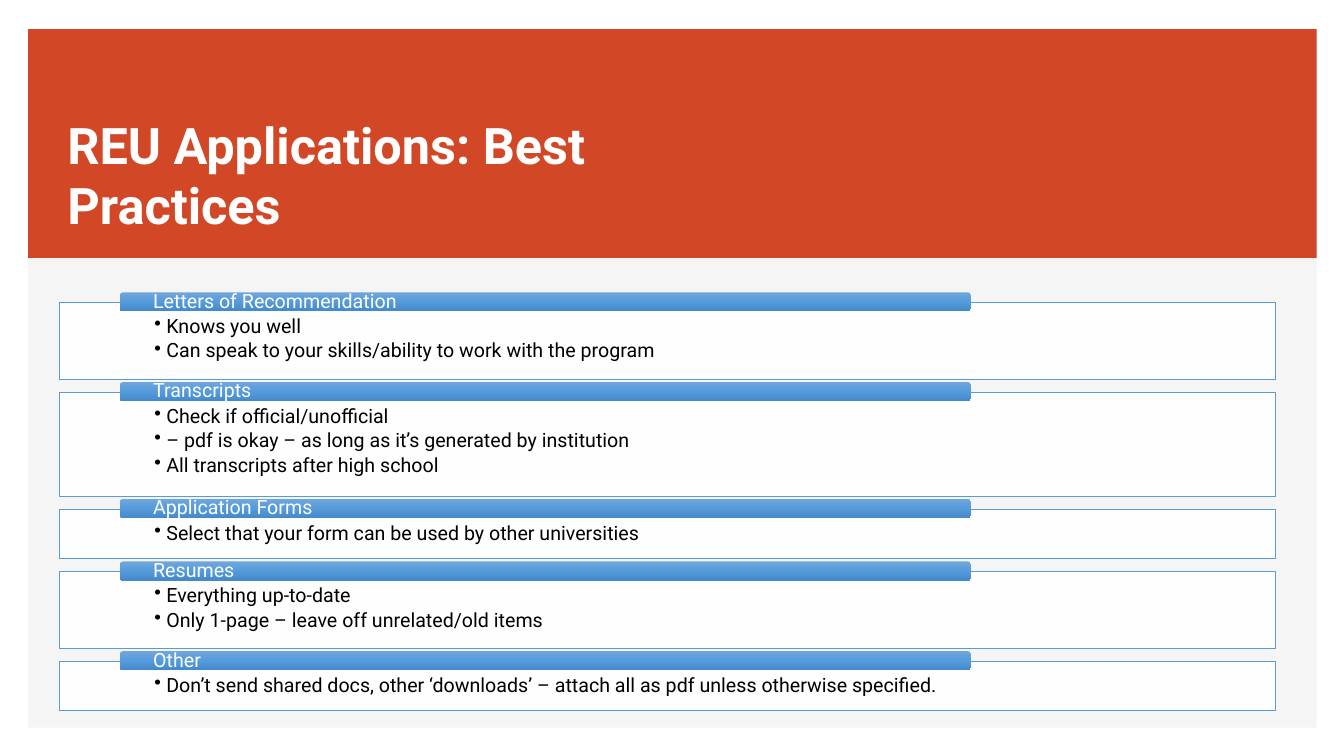
from copy import deepcopy

from pptx import Presentation
from pptx.dml.color import RGBColor
from pptx.enum import shapes, text
from pptx.oxml import ns
from pptx.util import Inches, Pt
from lxml import etree

WHITE = RGBColor(0xFF, 0xFF, 0xFF)
BLACK = RGBColor(0x00, 0x00, 0x00)
GREY = RGBColor(0xF5, 0xF5, 0xF5)
ORANGE = RGBColor(0xD2, 0x47, 0x26)
BLUE = RGBColor(0x5B, 0x9B, 0xD5)
BAR_GRADIENT = [
    RGBColor(0x71, 0xA6, 0xDB),
    RGBColor(0x55, 0x9B, 0xDB),
    RGBColor(0x44, 0x8A, 0xCA),
]
FONT = "Roboto"

SECTIONS = [
    ("Letters of Recommendation", [
        "Knows you well",
        "Can speak to your skills/ability to work with the program",
    ]),
    ("Transcripts", [
        "Check if official/unofficial",
        "– pdf is okay – as long as it’s generated by institution",
        "All transcripts after high school",
    ]),
    ("Application Forms", [
        "Select that your form can be used by other universities",
    ]),
    ("Resumes", [
        "Everything up-to-date",
        "Only 1-page – leave off unrelated/old items",
    ]),
    ("Other", [
        "Don’t send shared docs, other ‘downloads’ – attach all as pdf "
        "unless otherwise specified.",
    ]),
]
FIRST_PANEL_TOP = 3.0
PANEL_GAP = 0.13
PANEL_PADDING = 0.22
BULLET_HEIGHT = 0.27
BAR_RISE = 0.1


def add_box(slide, kind, left, top, width, height):
    shape = slide.shapes.add_shape(
        kind, Inches(left), Inches(top), Inches(width), Inches(height))
    shape.shadow.inherit = False
    shape.line.fill.background()
    return shape


def add_band(slide, height, color):
    band = add_box(slide, shapes.MSO_SHAPE.RECTANGLE, 0.28, 0.29, 12.78, height)
    band.fill.solid()
    band.fill.fore_color.rgb = color


def set_frame(frame, anchor, side, top, bottom):
    frame.word_wrap = True
    frame.vertical_anchor = anchor
    frame.margin_left = frame.margin_right = Inches(side)
    frame.margin_top, frame.margin_bottom = Inches(top), Inches(bottom)


def add_run(paragraph, words, size, color, bold=False):
    paragraph.alignment = text.PP_ALIGN.LEFT
    run = paragraph.add_run()
    run.text = words
    run.font.name = FONT
    run.font.size = Pt(size)
    run.font.bold = bold
    run.font.color.rgb = color


def add_title(slide, words):
    box = slide.shapes.add_textbox(
        Inches(0.57), Inches(1.68), Inches(7.52), Inches(0.7))
    set_frame(box.text_frame, text.MSO_ANCHOR.BOTTOM, 0.1, 0.05, 0.05)
    add_run(box.text_frame.paragraphs[0], words, 36, WHITE, bold=True)


def set_bullet(paragraph):
    properties = paragraph._p.get_or_add_pPr()
    properties.set("marL", str(Inches(0.12)))
    properties.set("indent", str(Inches(-0.12)))
    etree.SubElement(properties, ns.qn("a:buChar")).set("char", "•")


def add_panel(slide, top, height, bullets):
    panel = add_box(slide, shapes.MSO_SHAPE.RECTANGLE, 0.59, top, 12.06, height)
    panel.fill.solid()
    panel.fill.fore_color.rgb = WHITE
    color = panel._element.spPr.find(".//" + ns.qn("a:srgbClr"))
    etree.SubElement(color, ns.qn("a:alpha")).set("val", "90000")
    panel.line.color.rgb = BLUE
    panel.line.width = Pt(0.5)

    frame = panel.text_frame
    set_frame(frame, text.MSO_ANCHOR.TOP, 0.94, 0.14, 0.11)
    for index, words in enumerate(bullets):
        paragraph = frame.add_paragraph() if index else frame.paragraphs[0]
        paragraph.line_spacing = 0.9
        paragraph.space_after = Pt(2.4)
        set_bullet(paragraph)
        add_run(paragraph, words, 14, BLACK)


def fill_gradient(shape, colors):
    """Fill from top to bottom with evenly spaced colours."""
    shape.fill.gradient()
    shape.fill.gradient_angle = 270
    stop_list = shape._element.spPr.find(".//" + ns.qn("a:gsLst"))
    while len(stop_list) < len(colors):
        stop_list.append(deepcopy(stop_list[0]))
    for index, stop in enumerate(shape.fill.gradient_stops):
        stop.color.rgb = colors[index]
        stop.position = index / (len(colors) - 1)


def add_heading_bar(slide, top, words):
    bar = add_box(
        slide, shapes.MSO_SHAPE.ROUNDED_RECTANGLE, 1.19, top, 8.44, 0.19)
    fill_gradient(bar, BAR_GRADIENT)
    set_frame(bar.text_frame, text.MSO_ANCHOR.MIDDLE, 0.32, 0, 0)
    paragraph = bar.text_frame.paragraphs[0]
    paragraph.line_spacing = 0.9
    add_run(paragraph, words, 14, WHITE)


def main():
    presentation = Presentation()
    presentation.slide_width = Inches(13.33)
    presentation.slide_height = Inches(7.5)
    slide = presentation.slides.add_slide(presentation.slide_layouts[6])

    add_band(slide, 6.93, GREY)
    add_band(slide, 2.27, ORANGE)
    add_title(slide, "REU Applications: Best Practices")

    top = FIRST_PANEL_TOP
    for heading, bullets in SECTIONS:
        height = PANEL_PADDING + BULLET_HEIGHT * len(bullets)
        add_panel(slide, top, height, bullets)
        add_heading_bar(slide, top - BAR_RISE, heading)
        top += height + PANEL_GAP

    presentation.save("out.pptx")


if __name__ == "__main__":
    main()
